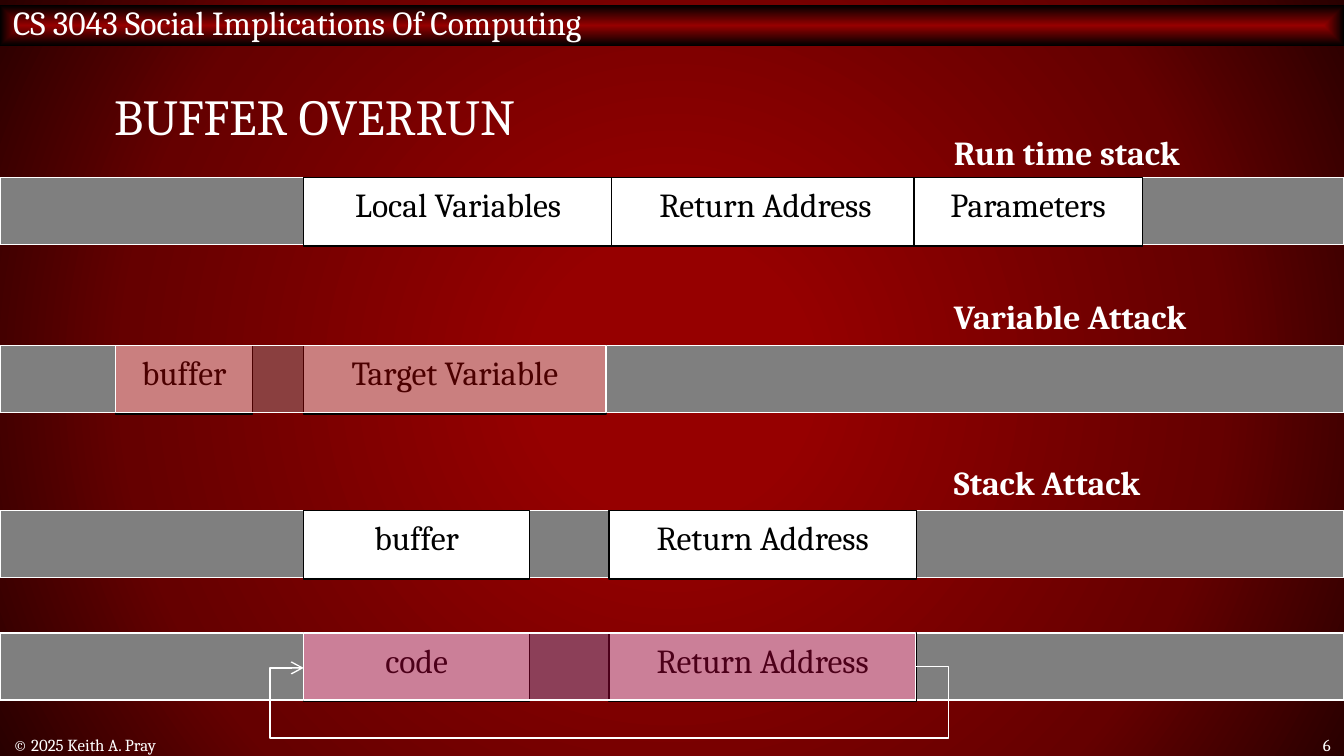
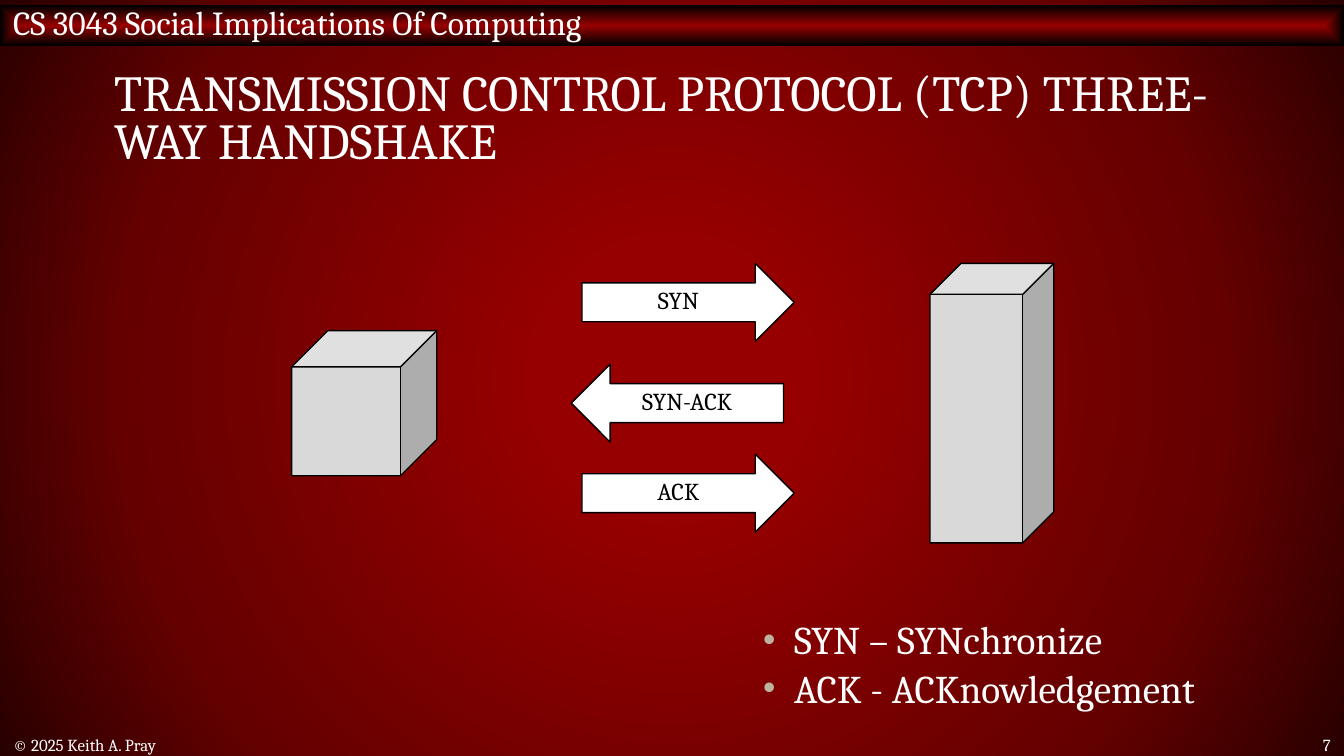
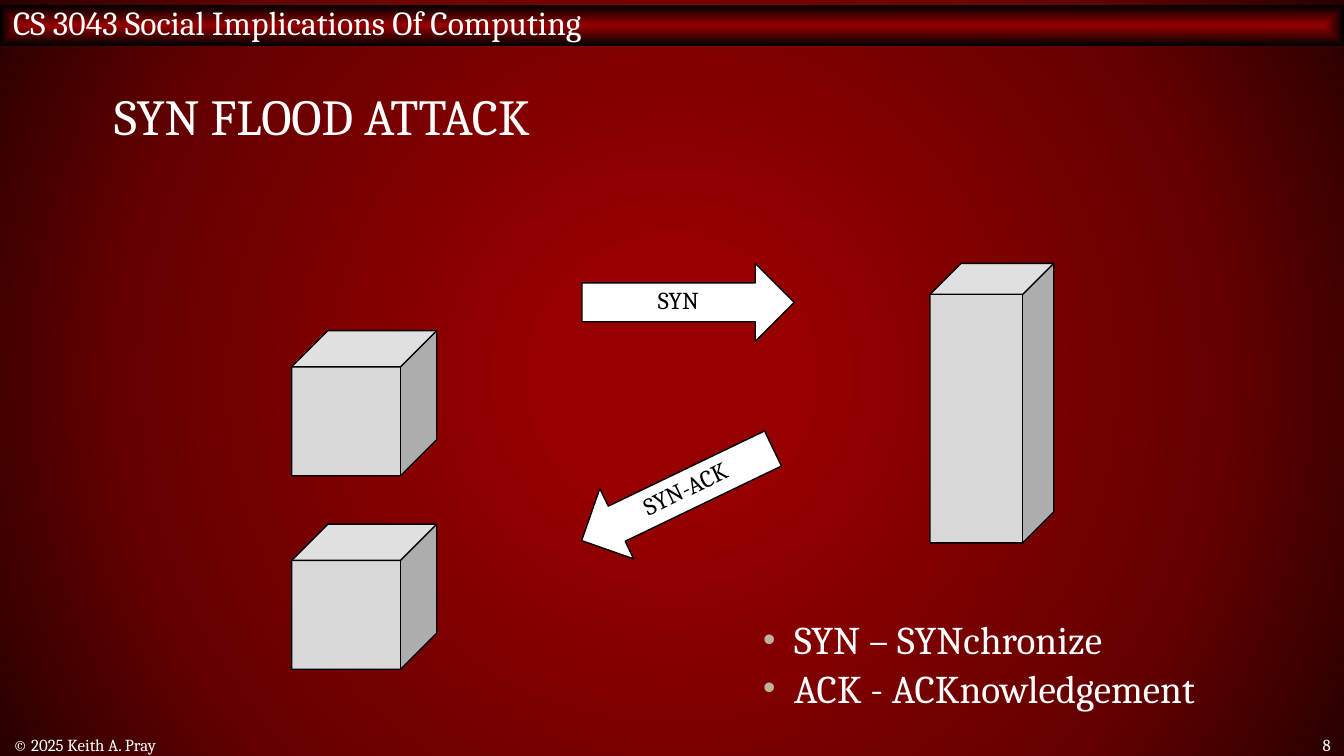
from dataclasses import dataclass

import lxml.etree
import pptx
import pptx.dml.color
import pptx.enum.shapes
import pptx.enum.text
import pptx.oxml
import pptx.oxml.ns
import pptx.util

Inches = pptx.util.Inches
Pt = pptx.util.Pt
qn = pptx.oxml.ns.qn
Shapes = pptx.enum.shapes.MSO_SHAPE
Align = pptx.enum.text.PP_ALIGN
Anchor = pptx.enum.text.MSO_ANCHOR


@dataclass(frozen=True)
class Theme:
    font: str = "Cambria"
    bullet_font: str = "Arial"
    white: str = "FFFFFF"
    black: str = "000000"
    red: str = "960000"
    dark_red: str = "650000"
    deep_red: str = "290000"
    crimson: str = "990033"
    memory: str = "7F7F7F"
    machine: str = "D9D9D9"
    bullet: str = "BCB49E"
    title_size: float = 27
    bullet_size: float = 21
    label_size: float = 18
    arrow_size: float = 13
    footer_size: float = 9
    line_width: float = 0.75
    tight: float = 0.8


THEME = Theme()
COURSE = "CS 3043 Social Implications Of Computing"
COPYRIGHT = "© 2025 Keith A. Pray"
GLOSSARY = ["SYN – SYNchronize", "ACK - ACKnowledgement"]
BAND_HEIGHT = 0.5
CELL_HEIGHT = 0.51


@dataclass(frozen=True)
class Box:
    left: float
    top: float
    width: float
    height: float

    def lengths(self) -> tuple:
        return tuple(Inches(n) for n in (self.left, self.top, self.width, self.height))


@dataclass(frozen=True)
class Cell:
    left: float
    width: float
    text: str


@dataclass(frozen=True)
class Overlay:
    left: float
    width: float
    color: str


@dataclass(frozen=True)
class MemoryBand:
    top: float
    cells: tuple
    heading: str = ""
    heading_top: float = 0
    overlay: Overlay | None = None


@dataclass(frozen=True)
class Message:
    text: str
    left: float
    top: float
    kind: object = Shapes.RIGHT_ARROW
    rotation: float = 0


MEMORY_BANDS = (
    MemoryBand(1.32, (Cell(2.26, 2.3, "Local Variables"),
                      Cell(4.55, 2.29, "Return Address"),
                      Cell(6.8, 1.7, "Parameters")), "Run time stack", 0.93),
    MemoryBand(2.57, (Cell(0.86, 1.02, "buffer"), Cell(2.26, 2.25, "Target Variable")),
               "Variable Attack", 2.15, Overlay(0.86, 3.65, THEME.red)),
    MemoryBand(3.8, (Cell(2.26, 1.68, "buffer"), Cell(4.53, 2.29, "Return Address")),
               "Stack Attack", 3.39),
    MemoryBand(4.71, (Cell(2.26, 1.68, "code"), Cell(4.53, 2.29, "Return Address")),
               overlay=Overlay(2.26, 4.55, THEME.crimson)),
)

CLIENT = Box(2.17, 2.46, 1.08, 1.08)
SPOOFED_CLIENT = Box(2.17, 3.9, 1.08, 1.08)
SERVER = Box(6.92, 1.96, 0.92, 2.08)
SYN = Message("SYN", 4.33, 1.96)
HANDSHAKE = (SYN, Message("ACK", 4.33, 3.38),
             Message("SYN-ACK", 4.25, 2.71, Shapes.LEFT_ARROW))
FLOOD = (SYN, Message("SYN-ACK", 4.25, 3.39, Shapes.LEFT_ARROW, 334.3))


# Formatting helpers
def rgb(color: str):
    return pptx.dml.color.RGBColor.from_string(color)


def set_path_gradient(properties, path: str, stops) -> None:
    """Replace the solid fill in properties with a centred path gradient."""
    stop_xml = "".join(f'<a:gs pos="{position * 1000}"><a:srgbClr val="{color}"/></a:gs>'
                       for position, color in stops)
    gradient = pptx.oxml.parse_xml(
        f'<a:gradFill {pptx.oxml.ns.nsdecls("a")} rotWithShape="1"><a:gsLst>{stop_xml}</a:gsLst>'
        f'<a:path path="{path}"><a:fillToRect l="50000" t="50000" r="50000" b="50000"/>'
        '</a:path></a:gradFill>')
    properties.replace(properties.find(qn("a:solidFill")), gradient)


def add_bullet(paragraph) -> None:
    properties = paragraph._p.get_or_add_pPr()
    properties.set("marL", str(Inches(0.23)))
    properties.set("indent", str(-Inches(0.23)))
    color = lxml.etree.SubElement(properties, qn("a:buClr"))
    lxml.etree.SubElement(color, qn("a:srgbClr"), val=THEME.bullet)
    lxml.etree.SubElement(properties, qn("a:buSzPct"), val="90000")
    lxml.etree.SubElement(properties, qn("a:buFont"), typeface=THEME.bullet_font)
    lxml.etree.SubElement(properties, qn("a:buChar"), char="•")


def write_text(shape, lines: list[str], *, size: float, color: str = THEME.white,
               bold: bool = False, align=Align.LEFT, anchor=Anchor.TOP, wrap: bool = True,
               line_spacing: float = 1.0, space_before: float = 0,
               bulleted: bool = False) -> None:
    frame = shape.text_frame
    frame.auto_size = pptx.enum.text.MSO_AUTO_SIZE.NONE
    frame.word_wrap = wrap
    frame.vertical_anchor = anchor
    for index, line in enumerate(lines):
        paragraph = frame.add_paragraph() if index else frame.paragraphs[0]
        paragraph.alignment = align
        paragraph.line_spacing = line_spacing
        paragraph.space_before = Pt(space_before if index else 0)
        if bulleted:
            add_bullet(paragraph)
        run = paragraph.add_run()
        run.text = line
        run.font.name = THEME.font
        run.font.size = Pt(size)
        run.font.bold = bold
        run.font.color.rgb = rgb(color)


def add_text(slide, box: Box, lines: list[str], **text_format) -> None:
    write_text(slide.shapes.add_textbox(*box.lengths()), lines, **text_format)


def add_shape(slide, kind, box: Box, fill: str, line: str | None = THEME.black):
    shape = slide.shapes.add_shape(kind, *box.lengths())
    shape.shadow.inherit = False
    shape.fill.solid()
    shape.fill.fore_color.rgb = rgb(fill)
    if line:
        shape.line.color.rgb = rgb(line)
        shape.line.width = Pt(THEME.line_width)
    else:
        shape.line.fill.background()
    return shape


# Parts shared by all slides
def set_background(presentation) -> None:
    master = presentation.slide_master
    master.background.fill.solid()
    set_path_gradient(master.element.find(".//" + qn("p:bgPr")), "circle",
                      [(17, THEME.red), (71, THEME.dark_red), (100, THEME.deep_red)])


def add_slide(presentation, title: str, number: int):
    slide = presentation.slides.add_slide(presentation.slide_layouts[5])
    band = add_shape(slide, Shapes.RECTANGLE, Box(0, 0.04, 10, 0.3), THEME.red, None)
    set_path_gradient(band.element.spPr, "shape", [(0, THEME.red), (100, THEME.black)])
    band.text_frame.margin_top = 0
    write_text(band, [COURSE], size=THEME.label_size, anchor=Anchor.MIDDLE)

    heading = slide.shapes.title
    heading.left, heading.top, heading.width, heading.height = Box(0.75, 0.4, 8.5, 1).lengths()
    write_text(heading, [title], size=THEME.title_size, anchor=Anchor.MIDDLE,
               line_spacing=THEME.tight)

    add_text(slide, Box(0, 5.46, 6.08, 0.16), [COPYRIGHT],
             size=THEME.footer_size, anchor=Anchor.MIDDLE)
    add_text(slide, Box(9.32, 5.46, 0.68, 0.16), [str(number)],
             size=THEME.footer_size, anchor=Anchor.MIDDLE, align=Align.RIGHT)
    return slide


# Buffer overrun
def draw_memory_band(slide, band: MemoryBand) -> None:
    add_shape(slide, Shapes.RECTANGLE, Box(0, band.top, 10, BAND_HEIGHT),
              THEME.memory, THEME.white)
    for cell in band.cells:
        shape = add_shape(slide, Shapes.RECTANGLE,
                          Box(cell.left, band.top, cell.width, CELL_HEIGHT), THEME.white)
        write_text(shape, [cell.text], size=THEME.label_size, color=THEME.black,
                   align=Align.CENTER, wrap=False)
    if band.overlay:
        box = Box(band.overlay.left, band.top, band.overlay.width, BAND_HEIGHT)
        shape = add_shape(slide, Shapes.RECTANGLE, box, band.overlay.color, THEME.white)
        color = shape.element.spPr.find(qn("a:solidFill")).find(qn("a:srgbClr"))
        lxml.etree.SubElement(color, qn("a:alpha"), val="50000")
    if band.heading:
        add_text(slide, Box(7, band.heading_top, 3, 0.4), [band.heading],
                 size=THEME.label_size, bold=True)


def draw_return_jump(slide) -> None:
    """Lead from the overwritten return address below the band to the code."""
    connector = slide.shapes.add_connector(
        pptx.enum.shapes.MSO_CONNECTOR.ELBOW,
        Inches(6.81), Inches(4.96), Inches(2.26), Inches(4.97))
    connector.line.color.rgb = rgb(THEME.white)
    connector.line.width = Pt(THEME.line_width)
    properties = connector.element.spPr
    geometry = properties.find(qn("a:prstGeom"))
    geometry.set("prst", "bentConnector5")
    guides = geometry.find(qn("a:avLst"))
    if guides is None:
        guides = lxml.etree.SubElement(geometry, qn("a:avLst"))
    for index, value in enumerate((-5500, 5400000, 105500), start=1):
        lxml.etree.SubElement(guides, qn("a:gd"), name=f"adj{index}", fmla=f"val {value}")
    lxml.etree.SubElement(properties.find(qn("a:ln")), qn("a:tailEnd"), type="arrow")
    lxml.etree.SubElement(properties, qn("a:effectLst"))


def build_buffer_overrun(presentation) -> None:
    slide = add_slide(presentation, "BUFFER OVERRUN", 6)
    for band in MEMORY_BANDS:
        draw_memory_band(slide, band)
    draw_return_jump(slide)


# Message exchanges between machines
def draw_message(slide, message: Message) -> None:
    arrow = add_shape(slide, message.kind, Box(message.left, message.top, 1.58, 0.58),
                      THEME.white)
    arrow.rotation = message.rotation
    write_text(arrow, [message.text], size=THEME.arrow_size, color=THEME.black,
               align=Align.CENTER, anchor=Anchor.MIDDLE, wrap=False,
               line_spacing=THEME.tight)


def build_exchange(presentation, title: str, number: int, machines, messages) -> None:
    slide = add_slide(presentation, title, number)
    for machine in machines:
        add_shape(slide, Shapes.CUBE, machine, THEME.machine)
    for message in messages:
        draw_message(slide, message)
    add_text(slide, Box(5.58, 4.6, 4.08, 0.8), GLOSSARY, size=THEME.bullet_size,
             line_spacing=THEME.tight, space_before=6, bulleted=True)


def main() -> None:
    presentation = pptx.Presentation()
    # Widescreen, 16:9
    presentation.slide_width = Inches(10)
    presentation.slide_height = Inches(10) * 9 // 16
    set_background(presentation)
    build_buffer_overrun(presentation)
    build_exchange(presentation, "TRANSMISSION CONTROL PROTOCOL (TCP) THREE-WAY HANDSHAKE", 7,
                   (CLIENT, SERVER), HANDSHAKE)
    build_exchange(presentation, "SYN FLOOD ATTACK", 8,
                   (CLIENT, SERVER, SPOOFED_CLIENT), FLOOD)
    presentation.save("out.pptx")


if __name__ == "__main__":
    main()
